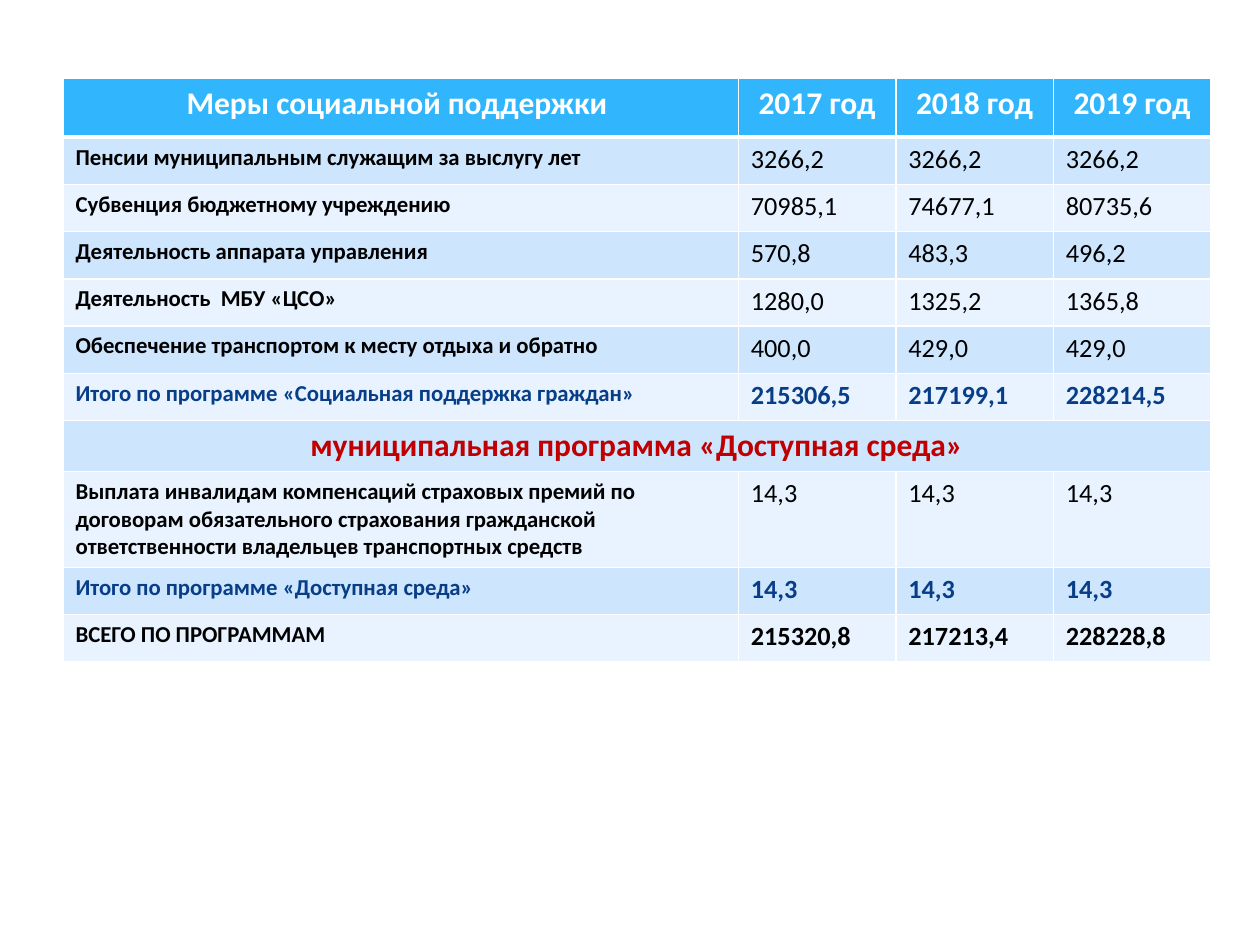
from lxml.etree import SubElement as Sub
from pptx import Presentation
from pptx.dml.color import RGBColor
from pptx.enum.text import PP_ALIGN as Align
from pptx.oxml.ns import qn
from pptx.util import Inches, Pt

WIDE, HIGH = Inches(10), Inches(7.5)
UNIT, STEP = WIDE / 8, HIGH / 20
WHITE, BLACK, NAVY, RED = "FFFFFF", "000000", "073E87", "C00000"
HEAD, BANDS = "31B6FD", ("CEE5FE", "E8F3FF")

TITLE = {"size": Pt(18), "bold": True, "align": Align.CENTER}
LABEL = {"size": Pt(13), "bold": True, "align": Align.LEFT}
VALUE = {"size": Pt(15), "bold": False, "align": Align.LEFT}
TOTAL = {**VALUE, "bold": True}

ROWS = [
    ("head", "Меры социальной поддержки ", "2017 год", "2018 год", "2019 год"),
    ("item", "Пенсии муниципальным служащим за выслугу лет", "3266,2", "3266,2", "3266,2"),
    ("item", "Субвенция бюджетному учреждению", "70985,1", "74677,1", "80735,6"),
    ("item", "Деятельность аппарата управления", "570,8", "483,3", "496,2"),
    ("item", "Деятельность  МБУ «ЦСО»", "1280,0", "1325,2", "1365,8"),
    ("item", "Обеспечение транспортом к месту отдыха и обратно", "400,0", "429,0", "429,0"),
    ("sum", "Итого по программе «Социальная поддержка граждан»", "215306,5", "217199,1", "228214,5"),
    ("part", "муниципальная программа «Доступная среда»"),
    ("item", "Выплата инвалидам компенсаций страховых премий по договорам обязательного "
     "страхования гражданской ответственности владельцев транспортных средств", "14,3", "14,3", "14,3"),
    ("sum", "Итого по программе «Доступная среда»", "14,3", "14,3", "14,3"),
    ("all", "ВСЕГО ПО ПРОГРАММАМ", "215320,8", "217213,4", "228228,8"),
]
LOOKS = {
    "head": (TITLE, TITLE, WHITE),
    "item": (LABEL, VALUE, BLACK),
    "sum": (LABEL, TOTAL, NAVY),
    "part": (TITLE, TITLE, RED),
    "all": (LABEL, TOTAL, BLACK),
}


def color(code):
    return RGBColor.from_string(code)


def edge(cell, top, low):
    props = cell._tc.get_or_add_tcPr()
    sides = {"lnL": 1, "lnR": 1, "lnT": top, "lnB": low}
    for spot, (side, width) in enumerate(sides.items()):
        line = Sub(props, qn(f"a:{side}"), w=str(Pt(width)))
        Sub(Sub(line, qn("a:solidFill")), qn("a:srgbClr"), val=WHITE)
        props.remove(line)
        props.insert(spot, line)


def fill(cell, back):
    cell.fill.solid()
    cell.fill.fore_color.rgb = color(back)


def write(cell, text, look, ink):
    para = cell.text_frame.paragraphs[0]
    para.alignment = look["align"]
    run = para.add_run()
    run.text = text
    run.font.color.rgb = color(ink)
    for name, value in {"name": "Calibri", "size": look["size"], "bold": look["bold"]}.items():
        setattr(run.font, name, value)


def costs(slide, left, top, width, height):
    count = len(ROWS[0]) - 1
    grid = slide.shapes.add_table(len(ROWS), count, left, top, width, height).table
    for num, col in enumerate(grid.columns):
        col.width = int(UNIT if num else width - UNIT * (count - 1))
    for num, (kind, *texts) in enumerate(ROWS):
        first, rest, ink = LOOKS[kind]
        grid.rows[num].height = int(STEP if num else STEP * 1.25)
        back = BANDS[(num - 1) % 2] if num else HEAD
        for pos in range(count):
            cell = grid.cell(num, pos)
            fill(cell, back)
            edge(cell, 3 if num == 1 else 1, 1 if num else 3)
            if pos < len(texts):
                write(cell, texts[pos], rest if pos else first, ink)
        if kind == "part":
            grid.cell(num, 0).merge(grid.cell(num, count - 1))


def main():
    deck = Presentation()
    deck.slide_width, deck.slide_height = WIDE, HIGH
    slide = deck.slides.add_slide(deck.slide_layouts[6])
    costs(slide, int(WIDE * 0.05), Inches(0.62), Inches(9.11), int(STEP * 11.25))
    deck.save("out.pptx")


if __name__ == "__main__":
    main()
